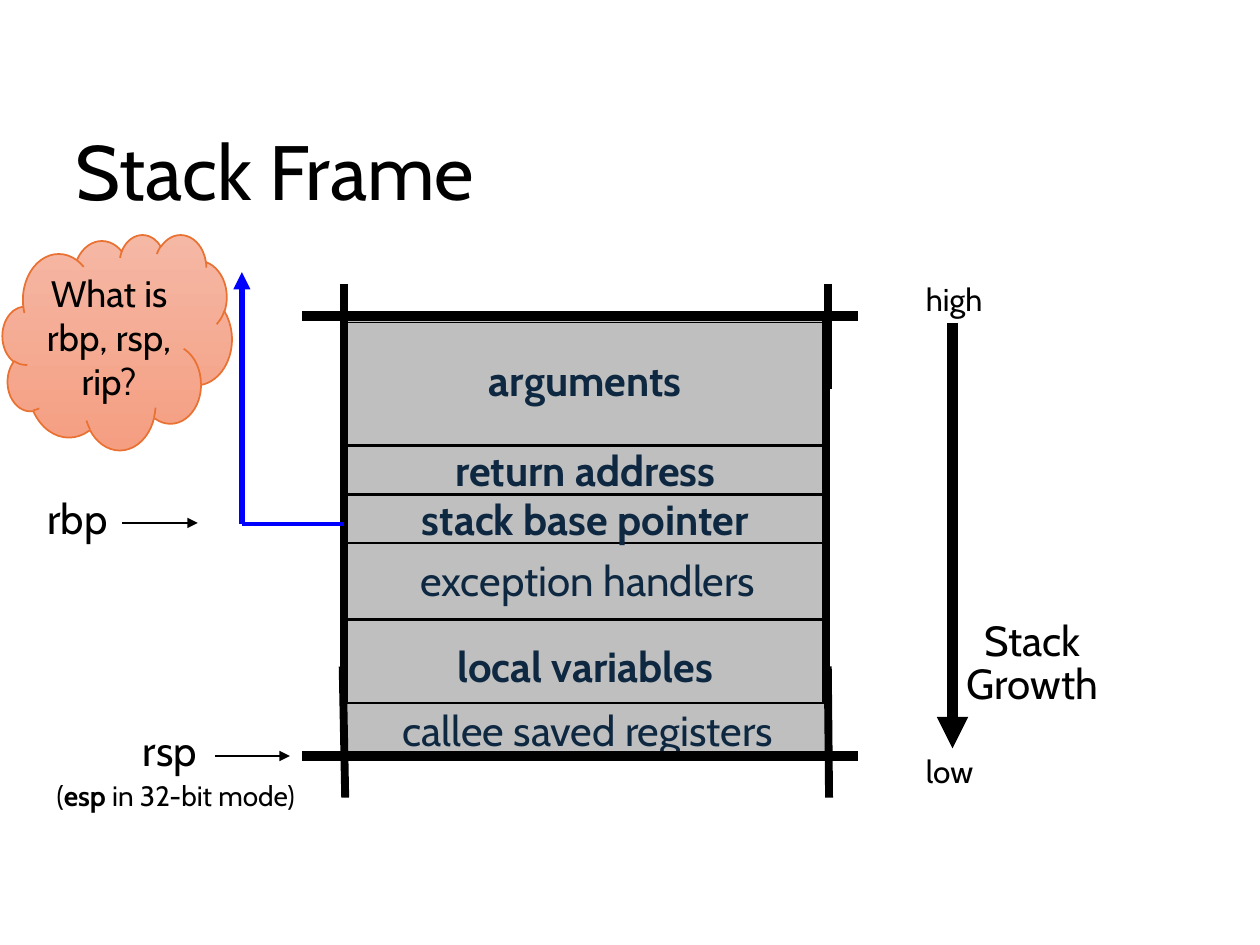
from dataclasses import dataclass

from pptx import Presentation
from pptx import util as u
from pptx.dml.color import RGBColor
from pptx.enum import shapes, text
from pptx.oxml import parse_xml
from pptx.oxml.ns import nsdecls

LEFT, CENTER = text.PP_ALIGN.LEFT, text.PP_ALIGN.CENTER
RECT, CLOUD = shapes.MSO_SHAPE.RECTANGLE, shapes.MSO_SHAPE.CLOUD


@dataclass(frozen=True)
class Theme:
    font: str = "Cabin"
    ink: str = "000000"
    navy: str = "0E2841"
    cell: str = "BFBFBF"
    blue: str = "0000FF"
    orange: str = "E97132"
    cloud: tuple = ("F5B8A5", "F59E82")
    title: int = 44
    label: int = 24
    bubble: int = 21
    address: int = 18
    note: int = 16
    hair: float = 0.75
    wall: float = 4.5
    beam: float = 6


class Canvas:
    """Draws on one slide, on a grid of 100 columns by 75 rows."""

    def __init__(self, prs, theme):
        self.theme = theme
        self.s = prs.slides.add_slide(prs.slide_layouts[5])
        self.col, self.row = prs.slide_width / 100, prs.slide_height / 75

    def grid(self, *lengths):
        return [u.Emu(round(n * (self.row if i % 2 else self.col)))
                for i, n in enumerate(lengths)]

    def add_runs(self, p, runs, size, color=None, align=LEFT):
        p.alignment = align
        for words, bold in runs:
            r = p.add_run()
            r.text = words
            fmt = {"name": self.theme.font, "size": u.Pt(size), "bold": bold}
            for key, value in fmt.items():
                setattr(r.font, key, value)
            r.font.color.rgb = RGBColor.from_string(color or self.theme.ink)

    def outline(self, sp, color, width):
        sp.line.color.rgb = RGBColor.from_string(color)
        sp.line.width = u.Pt(width)

    def title(self, words, *box):
        sp = self.s.shapes.title
        sp.left, sp.top, sp.width, sp.height = self.grid(*box)
        tf = sp.text_frame
        fmt = {"vertical_anchor": text.MSO_ANCHOR.MIDDLE, "word_wrap": True,
               "auto_size": text.MSO_AUTO_SIZE.NONE}
        for key, value in fmt.items():
            setattr(tf, key, value)
        p = tf.paragraphs[0]
        p.line_spacing = 0.9
        self.add_runs(p, [(words, False)], self.theme.title)

    def shape(self, kind, box, color, width, fill=None):
        sp = self.s.shapes.add_shape(kind, *self.grid(*box))
        sp.shadow.inherit = False
        self.outline(sp, color, width)
        if fill is None:
            sp.fill.background()
        elif isinstance(fill, tuple):
            sp.fill.gradient()
            sp.fill.gradient_angle = 270
            for stop, shade in zip(sp.fill.gradient_stops, fill):
                stop.color.rgb = RGBColor.from_string(shade)
        else:
            sp.fill.solid()
            sp.fill.fore_color.rgb = RGBColor.from_string(fill)
        return sp

    def cell(self, words, bold, *box):
        t = self.theme
        sp = self.shape(RECT, box, t.ink, t.hair, t.cell)
        tf = sp.text_frame
        tf.word_wrap = False
        tf.vertical_anchor = text.MSO_ANCHOR.MIDDLE
        self.add_runs(tf.paragraphs[0], [(words, bold)], t.label, t.navy, CENTER)

    def bubble(self, words, *box):
        t = self.theme
        sp = self.shape(CLOUD, box, t.orange, 1, t.cloud)
        tf = sp.text_frame
        tf.word_wrap = True
        tf.vertical_anchor = text.MSO_ANCHOR.MIDDLE
        self.add_runs(tf.paragraphs[0], [(words, False)], t.bubble, align=CENTER)

    def label(self, lines, size, align, *box):
        tf = self.s.shapes.add_textbox(*self.grid(*box)).text_frame
        tf.word_wrap = False
        tf.auto_size = text.MSO_AUTO_SIZE.SHAPE_TO_FIT_TEXT
        for i, runs in enumerate(lines):
            p = tf.add_paragraph() if i else tf.paragraphs[0]
            if i:
                p.line_spacing, p.space_before = 0.2, u.Pt(15)
            self.add_runs(p, runs, size, align=align)

    def line(self, ends, width, color=None, arrow=False, parent=None):
        sp = (parent or self.s).shapes.add_connector(
            shapes.MSO_CONNECTOR.STRAIGHT, *self.grid(*ends))
        self.outline(sp, color or self.theme.ink, width)
        pr = sp._element.spPr
        if arrow:
            pr.get_or_add_ln().append(
                parse_xml(f'<a:tailEnd {nsdecls("a")} type="triangle"/>'))
        pr.append(parse_xml(f'<a:effectLst {nsdecls("a")}/>'))


def main():
    prs = Presentation()
    prs.slide_width, prs.slide_height = u.Inches(10), u.Inches(7.5)
    t = Theme()
    c = Canvas(prs, t)
    left, right, width = 27.3, 65.6, 38.3

    c.title("Stack Frame", 5, 9.2, 90, 9.4)

    # Stack cells: words, bold, left, top, height
    cells = [("exception handlers", False, 27.5, 42.9, 6.2),
             ("arguments", True, left, 24.9, 10.4),
             ("return address", True, left, 35.4, 3.8),
             ("stack base pointer", True, left, 39.3, 3.8),
             ("local variables", True, left, 49.2, 7.3)]
    for words, bold, x, y, height in cells:
        c.cell(words, bold, x, y, width, height)

    # Frame around the stack
    c.line((left, 25.6, right, 25.6), t.hair)
    c.shape(RECT, (left, 25.2, width, 31.5), t.ink, t.wall)
    c.cell("callee saved registers", False, 27.5, 55.8, width, 4.2)
    for y in (25.1, 60):
        c.line((24, y, 68.1, y), t.beam)
    for x1, y1, x2, y2 in [(left, 22.5, left, 30.9), (65.7, 22.5, 65.7, 30.9),
                           (27.2, 52.9, 27.4, 63.3), (65.7, 52.9, 65.8, 63.3)]:
        c.line((x1, y1, x2, y2), t.wall)

    # Saved base pointer leads to the caller's frame
    link = c.s.shapes.add_group_shape()
    c.line((left, 41.6, 19.2, 41.6), 2.25, t.blue, parent=link)
    c.line((19.2, 41.6, 19.2, 21.6), 3.25, t.blue, True, link)

    # Register pointers
    for name, x, y, w, start, end, level in [
            ("rbp", 2.7, 38.6, 6.9, 9.7, 15.7, 41.5),
            ("rsp", 10.2, 57, 6.6, 17.1, 23, 60)]:
        c.label([[(name, False)]], t.label, CENTER, x, y, w, 5)
        c.line((start, level, end, level), t.hair, arrow=True)
    c.label([[("(", False), ("esp", True), (" in 32-bit mode)", False)]],
            t.note, LEFT, 3.5, 61.3, 21.5, 3.7)

    # Address axis and growth direction
    c.line((75.6, 25.6, 75.6, 59.4), t.beam, arrow=True)
    for words, y, w in [("high", 21.7, 6.6), ("low", 59.2, 5.9)]:
        c.label([[(words, False)]], t.address, LEFT, 72.5, y, w, 4)
    c.label([[("Stack", False)], [("Growth", False)]],
            t.label, CENTER, 75.6, 48.3, 12.7, 8.6)

    # Question
    c.bubble("What is rbp, rsp, rip?", 0.2, 18.6, 18.2, 17.1)

    prs.save("out.pptx")


if __name__ == "__main__":
    main()
